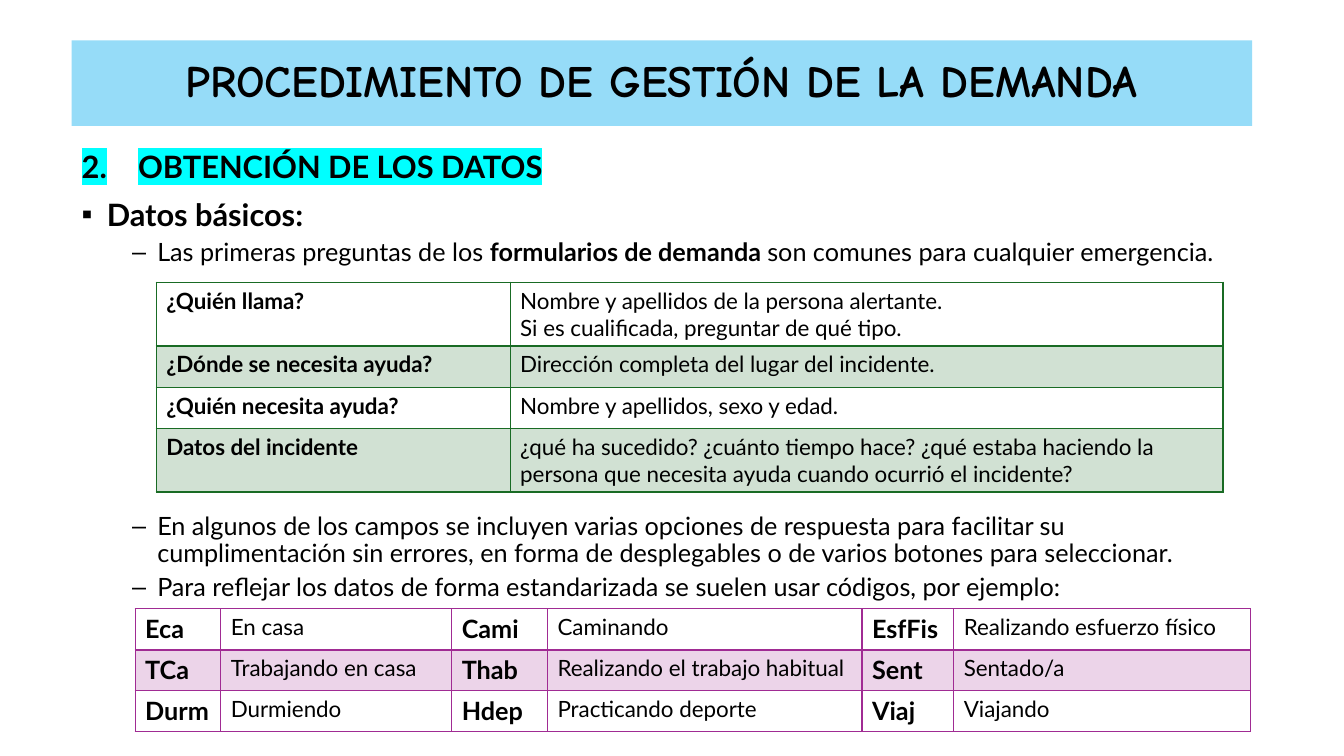
import pptx
import pptx.util
import pptx.dml.color
import pptx.enum.text
import pptx.oxml.ns
import lxml.etree

GRID = 0.1
INK = "000000"
SKY = "96DCF8"
CYAN = "00FFFF"
GREEN = "196B24"
PLUM = "A02B93"
SANS = "Lato"

ASKED = [
    ["¿Quién llama?", "Nombre y apellidos de la persona alertante.\nSi es cualificada, preguntar de qué tipo."],
    ["¿Dónde se necesita ayuda?", "Dirección completa del lugar del incidente."],
    ["¿Quién necesita ayuda?", "Nombre y apellidos, sexo y edad."],
    ["Datos del incidente", "¿qué ha sucedido? ¿cuánto tiempo hace? ¿qué estaba haciendo la "
     "persona que necesita ayuda cuando ocurrió el incidente?"],
]
CODES = [
    ["Eca", "En casa", "Cami", "Caminando", "EsfFis", "Realizando esfuerzo físico"],
    ["TCa", "Trabajando en casa", "Thab", "Realizando el trabajo habitual", "Sent", "Sentado/a"],
    ["Durm", "Durmiendo", "Hdep", "Practicando deporte", "Viaj", "Viajando"],
]


def grid(count):
    return pptx.util.Inches(count * GRID)


def color(code):
    return pptx.dml.color.RGBColor.from_string(code)


def node(root, tag, **attrs):
    return lxml.etree.SubElement(root, pptx.oxml.ns.qn("a:" + tag), attrs)


def write(para, text, size=18, bold=False, face=SANS, ink=INK, mark=None):
    run = para.add_run()
    run.text = text
    run.font.size = pptx.util.Pt(size)
    run.font.bold = bold
    run.font.name = face
    run.font.color.rgb = color(ink)
    if mark:
        props = run.font._element
        high = node(props, "highlight")
        node(high, "srgbClr", val=mark)
        props.find(pptx.oxml.ns.qn("a:latin")).addprevious(high)


def place(shape, box):
    shape.left, shape.top, shape.width, shape.height = map(grid, box)


def title(slide, box):
    shape = slide.shapes.title
    place(shape, box)
    shape.fill.solid()
    shape.fill.fore_color.rgb = color(SKY)
    frame = shape.text_frame
    frame.auto_size = pptx.enum.text.MSO_AUTO_SIZE.NONE
    frame.vertical_anchor = pptx.enum.text.MSO_ANCHOR.MIDDLE
    para = frame.paragraphs[0]
    para.alignment = pptx.enum.text.PP_ALIGN.CENTER
    para.line_spacing = 0.9
    write(para, "PROCEDIMIENTO DE GESTIÓN DE LA DEMANDA", size=32, bold=True, face="Comic Neue")


def item(para, runs, level=0, left=2.5, hang=2.5, before=10, sign="▪", start=None, **style):
    para.level = level
    para.line_spacing = 0.9
    para.space_before = pptx.util.Pt(before)
    para.space_after = pptx.util.Pt(0)
    props = para._p.get_or_add_pPr()
    props.set("marL", str(grid(left)))
    props.set("indent", str(-grid(hang)))
    if start:
        node(props, "buAutoNum", type="arabicPeriod", startAt=str(start))
    else:
        node(props, "buChar", char=sign)
    for text, bold in runs:
        write(para, text, bold=bold, **style)


def body(slide, box, gap):
    shape = slide.placeholders[1]
    place(shape, box)
    frame = shape.text_frame
    frame.auto_size = pptx.enum.text.MSO_AUTO_SIZE.NONE
    frame.vertical_anchor = pptx.enum.text.MSO_ANCHOR.TOP
    item(frame.paragraphs[0], [("OBTENCIÓN DE LOS DATOS", True)],
         left=5.6, hang=5.6, start=2, size=22, mark=CYAN)
    item(frame.add_paragraph(), [("Datos básicos:", True)], size=22)
    notes = [
        (5, [("Las primeras preguntas de los ", False), ("formularios de demanda ", True),
             ("son comunes para cualquier emergencia.", False)]),
        (gap, [("En algunos de los campos se incluyen varias opciones de respuesta para facilitar su "
                "cumplimentación sin errores, en forma de desplegables o de varios botones para "
                "seleccionar.", False)]),
        (5, [("Para reflejar los datos de forma estandarizada se suelen usar códigos, "
              "por ejemplo:", False)]),
    ]
    for before, runs in notes:
        item(frame.add_paragraph(), runs, level=1, left=7.5, before=before, sign="–")


def border(cell, hue, top, base):
    props = cell._tc.get_or_add_tcPr()
    sides = [("lnL", 1), ("lnR", 1), ("lnT", top), ("lnB", base)]
    for spot, (tag, width) in enumerate(sides):
        line = node(props, tag, w=str(pptx.util.Pt(width)))
        node(node(line, "solidFill"), "srgbClr", val=hue)
        props.insert(spot, line)


def tint(cell, hue, share):
    cell.fill.solid()
    cell.fill.fore_color.rgb = color(hue)
    shade = cell._tc.tcPr.find(".//" + pptx.oxml.ns.qn("a:srgbClr"))
    node(shade, "alpha", val=str(share * 1000))


def table(slide, box, rows, cols, tall, hue, size):
    frame = slide.shapes.add_table(len(rows), len(cols), *map(grid, box))
    sheet = frame.table
    sheet.first_row = False
    sheet.horz_banding = False
    for col, part in zip(sheet.columns, cols):
        col.width = grid(box[2] * part / sum(cols))
    for r, (row, part) in enumerate(zip(rows, tall)):
        sheet.rows[r].height = grid(box[3] * part / sum(tall))
        for c, text in enumerate(row):
            cell = sheet.cell(r, c)
            key = c % 2 == 0
            for n, line in enumerate(text.split("\n")):
                para = cell.text_frame.add_paragraph() if n else cell.text_frame.paragraphs[0]
                write(para, line, size=size if key else 16, bold=key)
            if r % 2:
                tint(cell, hue, 20)
            else:
                cell.fill.background()
            border(cell, hue, 2 if r == 1 else 1, 2 if r == 0 else 1)


def main():
    deck = pptx.Presentation()
    deck.slide_width = pptx.util.Inches(13.33)
    deck.slide_height = pptx.util.Inches(7.5)
    slide = deck.slides.add_slide(deck.slide_layouts[1])
    title(slide, (7.1, 4, 117.1, 8.5))
    body(slide, (7.1, 14.6, 117.1, 56.4), gap=176)
    table(slide, (15.5, 28, 105.8, 20.8), ASKED, [3.51, 7.07], [0.63, 0.41, 0.41, 0.63], GREEN, 16)
    table(slide, (13.4, 60.4, 110.6, 12.2), CODES, [0.85, 2.29, 0.95, 3.12, 0.91, 2.94],
          [1, 1, 1], PLUM, 18)
    deck.save("out.pptx")


if __name__ == "__main__":
    main()
